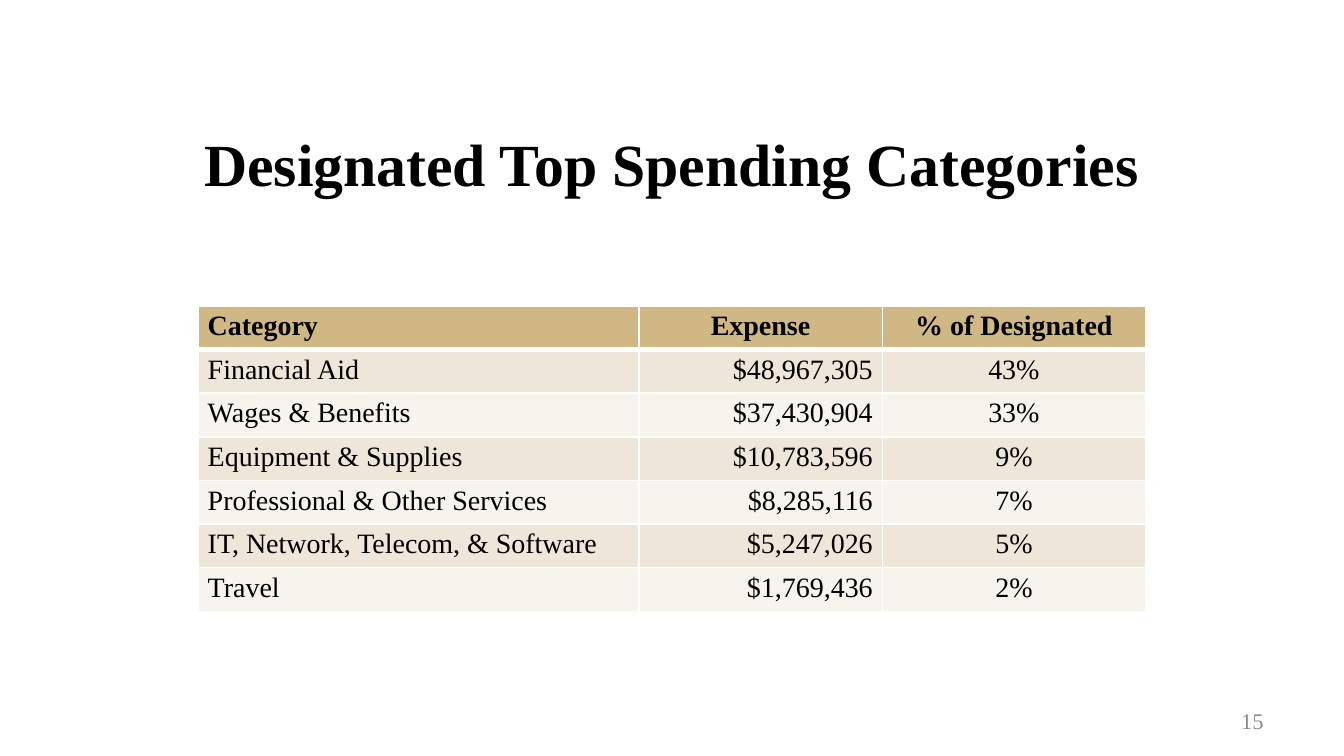
import pptx
import pptx.util
import pptx.dml.color
import pptx.enum.text
import pptx.oxml
import pptx.oxml.ns

Pt = pptx.util.Pt
Align = pptx.enum.text.PP_ALIGN
Anchor = pptx.enum.text.MSO_ANCHOR


def color(value):
    return pptx.dml.color.RGBColor.from_string(value)


def add_text(frame, text, size, fill, align, bold=False):
    paragraph = frame.paragraphs[0]
    paragraph.alignment = align
    run = paragraph.add_run()
    run.text = text
    run.font.name = "Times New Roman"
    run.font.size = Pt(size)
    run.font.bold = bold
    run.font.color.rgb = color(fill)


deck = pptx.Presentation()
deck.slide_width, deck.slide_height = Pt(720), Pt(405)
slide = deck.slides.add_slide(deck.slide_layouts[6])

# Title and page number
for text, box, size, fill, align, bold in (
    ("Designated Top Spending Categories", (36, 58.5, 648, 57.6), 32, "000000", Align.CENTER, True),
    ("15", (516, 375.4, 168, 21.6), 12, "8C8C8C", Align.RIGHT, False),
):
    frame = slide.shapes.add_textbox(*map(Pt, box)).text_frame
    frame.word_wrap = True
    frame.vertical_anchor = Anchor.MIDDLE
    add_text(frame, text, size, fill, align, bold)

# Spending table
spending = (
    ("Category", "Expense", "% of Designated"),
    ("Financial Aid", "$48,967,305", "43%"),
    ("Wages & Benefits", "$37,430,904", "33%"),
    ("Equipment & Supplies", "$10,783,596", "9%"),
    ("Professional & Other Services", "$8,285,116", "7%"),
    ("IT, Network, Telecom, & Software", "$5,247,026", "5%"),
    ("Travel", "$1,769,436", "2%"),
)
column_widths = (236, 130.5, 141)
row_height = 23.4
table = slide.shapes.add_table(
    len(spending), len(column_widths), Pt(106.2), Pt(163.8),
    Pt(sum(column_widths)), Pt(row_height * len(spending)),
).table
for column, width in zip(table.columns, column_widths):
    column.width = Pt(width)

for r, entries in enumerate(spending):
    table.rows[r].height = Pt(row_height)
    header = r == 0
    band = "D0B884" if header else ("F7F3ED", "EEE6D9")[r % 2]
    aligns = (Align.LEFT, Align.CENTER if header else Align.RIGHT, Align.CENTER)
    for c, entry in enumerate(entries):
        cell = table.cell(r, c)
        cell.margin_left = cell.margin_right = Pt(5.1)
        cell.margin_top = cell.margin_bottom = Pt(2.6)
        add_text(cell.text_frame, entry, 15, "000000", aligns[c], header)

        # White borders, heavier under the header; they precede the fill in XML
        for side in ("L", "R", "T", "B"):
            heavy = (r, side) in ((0, "B"), (1, "T"))
            cell._tc.get_or_add_tcPr().append(pptx.oxml.parse_xml(
                f'<a:ln{side} {pptx.oxml.ns.nsdecls("a")} w="{Pt(3 if heavy else 1)}">'
                f'<a:solidFill><a:srgbClr val="FFFFFF"/></a:solidFill></a:ln{side}>'
            ))
        cell.fill.solid()
        cell.fill.fore_color.rgb = color(band)

deck.save("out.pptx")
